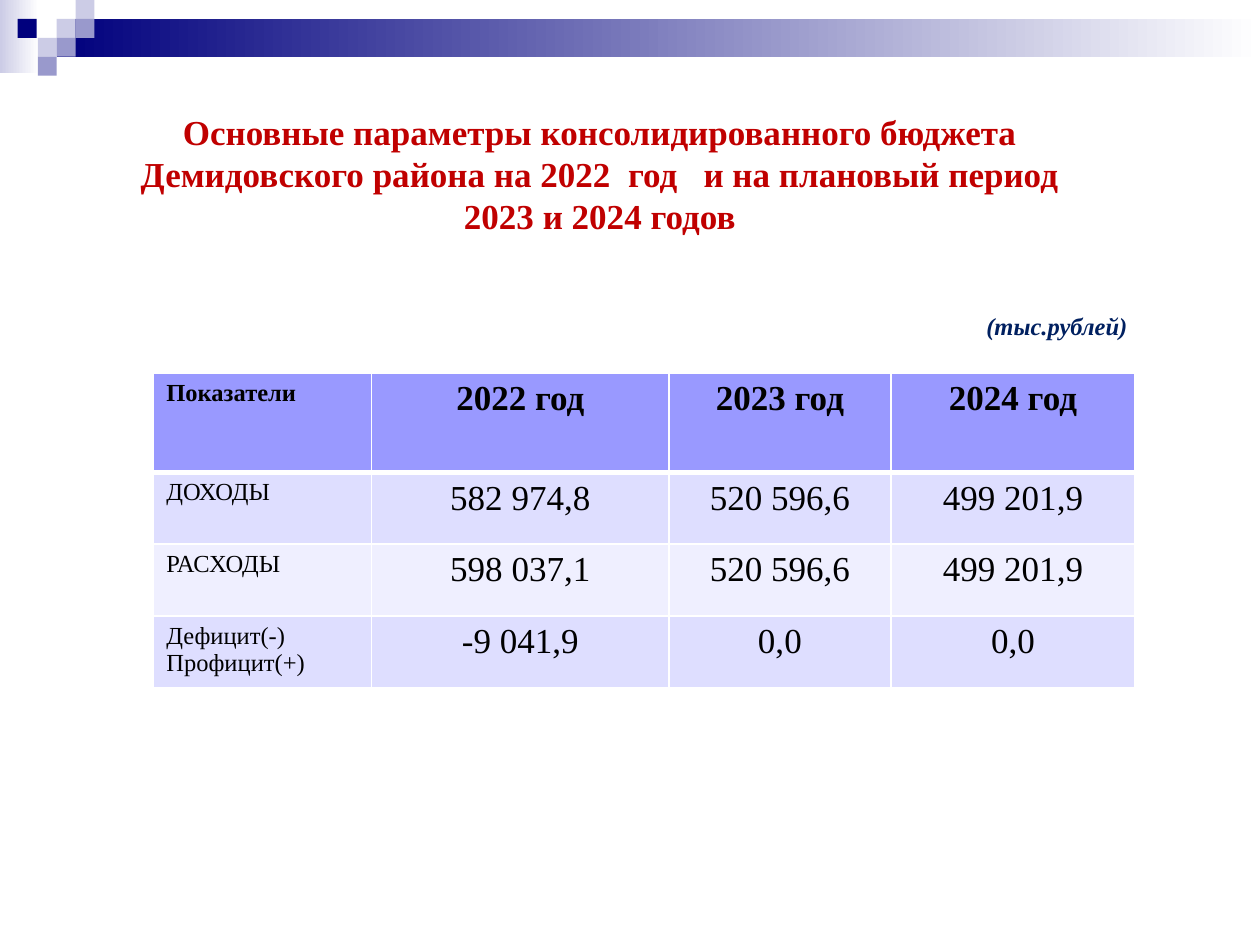
import pptx
import pptx.dml.color
import pptx.enum.shapes
import pptx.enum.text
import pptx.oxml
import pptx.oxml.ns
import pptx.util
from pptx.util import Inches

FONT = "Times New Roman"
NAVY, LAVENDER, VIOLET, WHITE = "00007D", "CCCCE6", "9999CC", "FFFFFF"
SQUARE = 0.15
SQUARES = [  # left, top, colour
    (0.45, 0.15, LAVENDER), (0.6, 0, LAVENDER), (0.6, 0.15, VIOLET),
    (0.3, 0.3, LAVENDER), (0.14, 0.15, NAVY), (0.45, 0.3, VIOLET),
    (0.3, 0.45, VIOLET),
]
TITLE = [
    "Основные параметры консолидированного бюджета",
    "Демидовского района на 2022  год   и на плановый период 2023 и 2024 годов",
]
COLUMN_WIDTHS = [1.73, 2.36, 1.76, 1.94]
ROW_HEIGHTS = [0.79, 0.57, 0.57, 0.57]
ROW_FILLS = ["9999FF", "DEDEFF", "EFEFFF", "DEDEFF"]
BUDGET = [
    ["Показатели", "2022 год", "2023 год", "2024 год"],
    ["ДОХОДЫ", "582 974,8", "520 596,6", "499 201,9"],
    ["РАСХОДЫ", "598 037,1", "520 596,6", "499 201,9"],
    ["Дефицит(-)\nПрофицит(+)", "-9 041,9", "0,0", "0,0"],
]


def rgb(value):
    return pptx.dml.color.RGBColor.from_string(value)


def add_rectangle(page, left, top, width, height, start, end=None):
    """Plain rectangle, or a left-to-right gradient when end is given."""
    box = page.shapes.add_shape(
        pptx.enum.shapes.MSO_SHAPE.RECTANGLE,
        Inches(left), Inches(top), Inches(width), Inches(height))
    box.shadow.inherit = False
    box.line.fill.background()
    if end is None:
        box.fill.solid()
        box.fill.fore_color.rgb = rgb(start)
        return
    box.fill.gradient()
    box.fill.gradient_angle = 0
    for stop, colour in zip(box.fill.gradient_stops, (start, end)):
        stop.color.rgb = rgb(colour)


def style_text(frame, size, colour, bold=False, italic=False, centred=False):
    align = pptx.enum.text.PP_ALIGN
    for para in frame.paragraphs:
        para.alignment = align.CENTER if centred else align.LEFT
        para.font.name = FONT
        para.font.size = pptx.util.Pt(size)
        para.font.bold = bold
        para.font.italic = italic
        para.font.color.rgb = rgb(colour)


def add_text(page, left, top, width, height, text):
    box = page.shapes.add_textbox(
        Inches(left), Inches(top), Inches(width), Inches(height))
    box.text_frame.text = text
    return box.text_frame


def add_title(page):
    frame = add_text(page, 0.94, 0.55, 7.64, 1.33, "\n".join(TITLE))
    frame.word_wrap = True
    frame.vertical_anchor = pptx.enum.text.MSO_ANCHOR.BOTTOM
    frame.margin_left = frame.margin_right = frame.margin_bottom = 0
    style_text(frame, 20, "C00000", bold=True, centred=True)
    for para in frame.paragraphs:
        para.line_spacing = pptx.util.Pt(24)


def set_borders(cell, widths):
    """Draw white borders, in points, in the order left, right, top, bottom."""
    properties = cell._tc.get_or_add_tcPr()
    for index, (side, width) in enumerate(zip("LRTB", widths)):
        properties.insert(index, pptx.oxml.parse_xml(
            f'<a:ln{side} {pptx.oxml.ns.nsdecls("a")} w="{pptx.util.Pt(width)}">'
            f'<a:solidFill><a:srgbClr val="{WHITE}"/></a:solidFill></a:ln{side}>'))


def add_budget_table(page):
    table = page.shapes.add_table(
        len(BUDGET), len(COLUMN_WIDTHS), Inches(1.22), Inches(2.96),
        Inches(sum(COLUMN_WIDTHS)), Inches(sum(ROW_HEIGHTS))).table
    for column, width in zip(table.columns, COLUMN_WIDTHS):
        column.width = Inches(width)
    for row_index, values in enumerate(BUDGET):
        table.rows[row_index].height = Inches(ROW_HEIGHTS[row_index])
        for column_index, value in enumerate(values):
            cell = table.cell(row_index, column_index)
            cell.text = value
            cell.fill.solid()
            cell.fill.fore_color.rgb = rgb(ROW_FILLS[row_index])
            is_label = column_index == 0
            style_text(cell.text_frame, 14 if is_label else 20, "000000",
                       bold=row_index == 0, centred=not is_label)
            set_borders(cell, (1, 1, 3 if row_index == 1 else 1,
                               3 if row_index == 0 else 1))


def main():
    deck = pptx.Presentation()
    deck.slide_width, deck.slide_height = Inches(10), Inches(7.5)
    page = deck.slides.add_slide(deck.slide_layouts[6])
    add_rectangle(page, 0, 0, 0.31, 0.58, LAVENDER, WHITE)
    add_rectangle(page, 0.45, 0.15, 9.55, 0.3, NAVY, WHITE)
    for left, top, colour in SQUARES:
        add_rectangle(page, left, top, SQUARE, SQUARE, colour)
    add_title(page)
    add_budget_table(page)
    unit = add_text(page, 7.73, 2.42, 1.33, 0.34, "(тыс.рублей)")
    unit.word_wrap = False
    style_text(unit, 14, "002060", bold=True, italic=True)
    deck.save("out.pptx")


if __name__ == "__main__":
    main()
